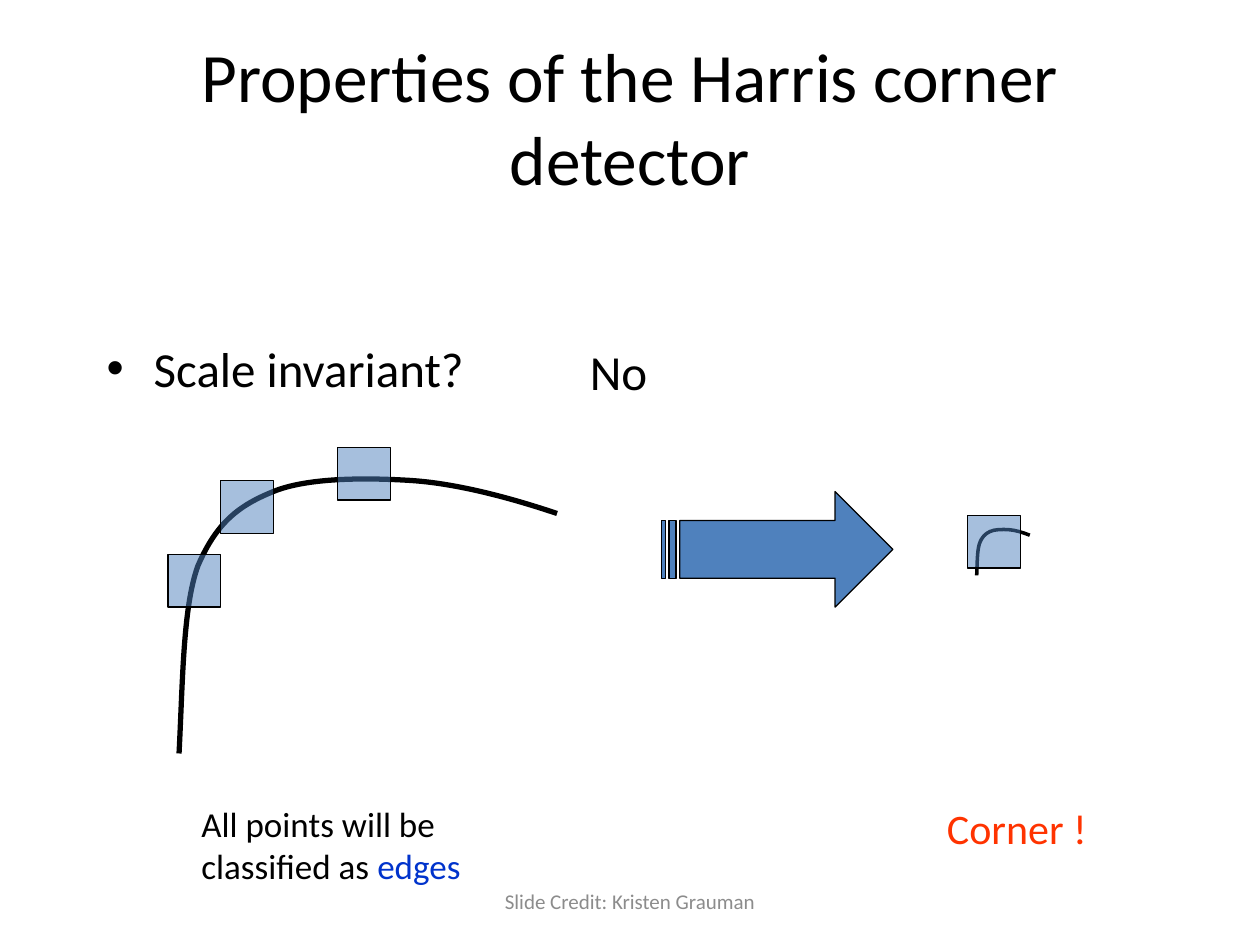
from lxml import etree
from pptx import Presentation
from pptx.dml.color import RGBColor
from pptx.enum.shapes import MSO_SHAPE
from pptx.enum.text import MSO_ANCHOR, PP_ALIGN
from pptx.oxml.ns import qn
from pptx.util import Cm, Pt

SQUARE, ARROW = MSO_SHAPE.RECTANGLE, MSO_SHAPE.STRIPED_RIGHT_ARROW
LEFT, CENTER = PP_ALIGN.LEFT, PP_ALIGN.CENTER
TOP, MIDDLE = MSO_ANCHOR.TOP, MSO_ANCHOR.MIDDLE

WINDOW = 1.06  # side of the detector window, the same at both scales
# Start point, then two control points and an end point per curve,
# as fractions of the width and height
CONTOUR = [(0, 1),
           (0.01, 0.74), (0.01, 0.47), (0.05, 0.32),
           (0.1, 0.16), (0.16, 0.1), (0.25, 0.05),
           (0.34, 0), (0.49, 0), (0.61, 0.01),
           (0.73, 0.02), (0.87, 0.07), (1, 0.13)]


def color(value):
    return RGBColor.from_string(value)


class SlideBuilder:
    font = "Calibri"
    ink = "000000"
    accent = "4F81BD"

    def __init__(self, page):
        self.page = page

    def text(self, left, top, width, height, spans, size,
             align=LEFT, anchor=TOP, bullet=False):
        """Add one paragraph made of (text, colour) spans."""
        box = self.page.shapes.add_textbox(Cm(left), Cm(top), Cm(width), Cm(height))
        frame = box.text_frame
        frame.word_wrap = True
        frame.vertical_anchor = anchor
        para = frame.paragraphs[0]
        para.alignment = align
        para.font.name = self.font
        para.font.size = Pt(size)
        for words, tint in spans:
            span = para.add_run()
            span.text = words
            span.font.color.rgb = color(tint)
        if bullet:
            props = para._p.get_or_add_pPr()
            props.set("marL", str(Cm(0.95)))
            props.set("indent", str(-Cm(0.95)))
            mark_font = etree.Element(qn("a:buFont"), typeface="Arial")
            mark = etree.Element(qn("a:buChar"), char="•")
            props.insert(0, mark_font)
            mark_font.addnext(mark)

    def shape(self, kind, left, top, width, height, opacity=100):
        shape = self.page.shapes.add_shape(kind, Cm(left), Cm(top), Cm(width), Cm(height))
        shape.shadow.inherit = False
        shape.fill.solid()
        shape.fill.fore_color.rgb = color(self.accent)
        self.outline(shape, 0.75)
        if opacity < 100:
            tint = shape.fill._xPr.find(qn("a:solidFill"))[0]
            etree.SubElement(tint, qn("a:alpha"), val=str(opacity * 1000))

    def window(self, left, top):
        self.shape(SQUARE, left, top, WINDOW, WINDOW, opacity=50)

    def contour(self, left, top, width, height, weight):
        points = [(Cm(left + x * width), Cm(top + y * height)) for x, y in CONTOUR]
        builder = self.page.shapes.build_freeform(*points[0])
        builder.add_line_segments(points[1:], close=False)
        curve = builder.convert_to_shape()
        curve.shadow.inherit = False
        curve.fill.background()
        self.outline(curve, weight)
        # Join each three straight steps into one cubic curve
        steps = list(curve._element.iter(qn("a:lnTo")))
        for start in range(0, len(steps), 3):
            cubic = etree.Element(qn("a:cubicBezTo"))
            steps[start].addprevious(cubic)
            for step in steps[start:start + 3]:
                cubic.append(step[0])
                step.getparent().remove(step)

    def outline(self, shape, weight):
        shape.line.color.rgb = color(self.ink)
        shape.line.width = Pt(weight)


def main():
    deck = Presentation()
    deck.slide_width, deck.slide_height = Cm(25.4), Cm(19.05)
    slide = SlideBuilder(deck.slides.add_slide(deck.slide_layouts[6]))
    ink = slide.ink

    # Title and question
    slide.text(1.27, 0.76, 22.86, 3.18, [("Properties of the Harris corner detector", ink)],
               39.6, CENTER, MIDDLE)
    slide.text(1.9, 6.7, 9, 1.45, [("Scale invariant?", ink)], 28, bullet=True)

    # Large scale: every window sees an edge
    slide.contour(3.61, 9.63, 7.62, 5.56, 3)
    for left, top in [(3.39, 11.18), (4.45, 9.69), (6.81, 9.02)]:
        slide.window(left, top)
    slide.text(3.81, 16.05, 7.2, 1.96,
               [("All points will be classified as ", ink), ("edges", "0033CC")], 20)

    # Small scale: one window holds the whole corner
    slide.contour(19.69, 10.67, 1.07, 0.93, 2)
    slide.window(19.51, 10.39)
    slide.shape(ARROW, 13.34, 9.91, 4.66, 2.33)
    slide.text(18.84, 16.05, 3.81, 1.27, [("Corner !", "FF3300")], 24)

    # Answer and credit
    slide.text(11.64, 6.77, 5.29, 1.45, [("No", ink)], 28)
    slide.text(8.68, 17.66, 8.04, 1.01, [("Slide Credit: Kristen Grauman", "8C8C8C")],
               12, CENTER, MIDDLE)

    deck.save("out.pptx")


if __name__ == "__main__":
    main()
